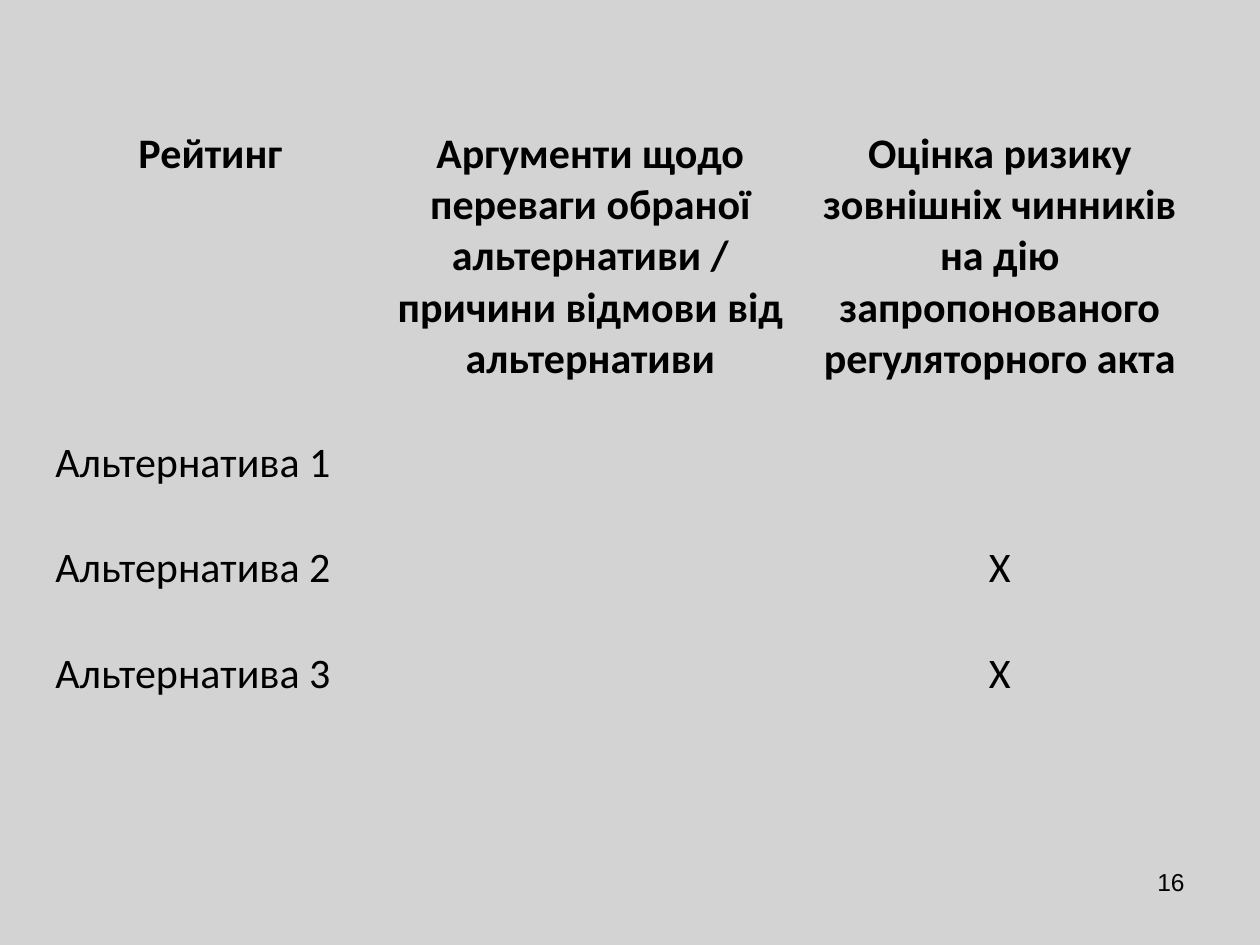
from pptx import Presentation
from pptx.dml.color import RGBColor
from pptx.enum.text import MSO_ANCHOR, PP_ALIGN
from pptx.oxml.ns import qn
from pptx.util import Inches, Pt
from lxml import etree

LEFT, CENTER, RIGHT = PP_ALIGN.LEFT, PP_ALIGN.CENTER, PP_ALIGN.RIGHT
TOP = MSO_ANCHOR.TOP

HEADERS = [
    "Рейтинг",
    "Аргументи щодо переваги обраної альтернативи / причини відмови від альтернативи",
    "Оцінка ризику зовнішніх чинників на дію запропонованого регуляторного акта",
]
ALTERNATIVES = [
    ["Альтернатива 1", "", ""],
    ["Альтернатива 2", "", "Х"],
    ["Альтернатива 3", "", "Х"],
]
PAGE_NUMBER = "16"

THEME = {
    "background": RGBColor(0xD3, 0xD3, 0xD3),
    "text": RGBColor(0, 0, 0),
    "header": {"name": "Calibri", "size": Pt(24), "bold": True},
    "body": {"name": "Calibri", "size": Pt(24), "bold": False},
    "number": {"name": "Arial", "size": Pt(14), "bold": False},
}
COLUMN_WIDTHS = [2.5, 3.53, 2.97]
HEADER_HEIGHT, ROW_HEIGHT = 2.45, 0.84
CELL_MARGINS = dict.fromkeys(
    ["margin_left", "margin_right", "margin_top", "margin_bottom"], Inches(0.02)
)


def write(frame, text, style, alignment):
    para = frame.paragraphs[0]
    para.alignment = alignment
    if text:
        span = para.add_run()
        span.text = text
        font = span.font
    else:
        font = para.font
    for name, value in THEME[style].items():
        setattr(font, name, value)
    font.color.rgb = THEME["text"]


def format_cell(cell):
    for name, value in CELL_MARGINS.items():
        setattr(cell, name, value)
    cell.vertical_anchor = TOP
    properties = cell._tc.get_or_add_tcPr()
    for side in ("a:lnL", "a:lnR", "a:lnT", "a:lnB"):
        border = etree.SubElement(properties, qn(side))
        etree.SubElement(border, qn("a:noFill"))
    cell.fill.background()


def add_rating_table(page):
    rows = [HEADERS] + ALTERNATIVES
    heights = [HEADER_HEIGHT] + [ROW_HEIGHT] * len(ALTERNATIVES)
    table = page.shapes.add_table(
        len(rows), len(HEADERS), Inches(0.42), Inches(1),
        Inches(sum(COLUMN_WIDTHS)), Inches(sum(heights)),
    ).table
    table.first_row = table.horz_banding = False
    for column, width in zip(table.columns, COLUMN_WIDTHS):
        column.width = Inches(width)
    for row_index, (texts, height) in enumerate(zip(rows, heights)):
        table.rows[row_index].height = Inches(height)
        style = "body" if row_index else "header"
        for column_index, text in enumerate(texts):
            cell = table.cell(row_index, column_index)
            format_cell(cell)
            alignment = LEFT if row_index and column_index == 0 else CENTER
            write(cell.text_frame, text, style, alignment)


def add_page_number(page):
    box = page.shapes.add_textbox(Inches(7.17), Inches(6.83), Inches(2.33), Inches(0.52))
    box.text_frame.word_wrap = True
    box.text_frame.vertical_anchor = TOP
    write(box.text_frame, PAGE_NUMBER, "number", RIGHT)


def main():
    deck = Presentation()
    deck.slide_width, deck.slide_height = Inches(10), Inches(7.5)
    page = deck.slides.add_slide(deck.slide_layouts[6])
    page.background.fill.solid()
    page.background.fill.fore_color.rgb = THEME["background"]
    add_page_number(page)
    add_rating_table(page)
    deck.save("out.pptx")


if __name__ == "__main__":
    main()
